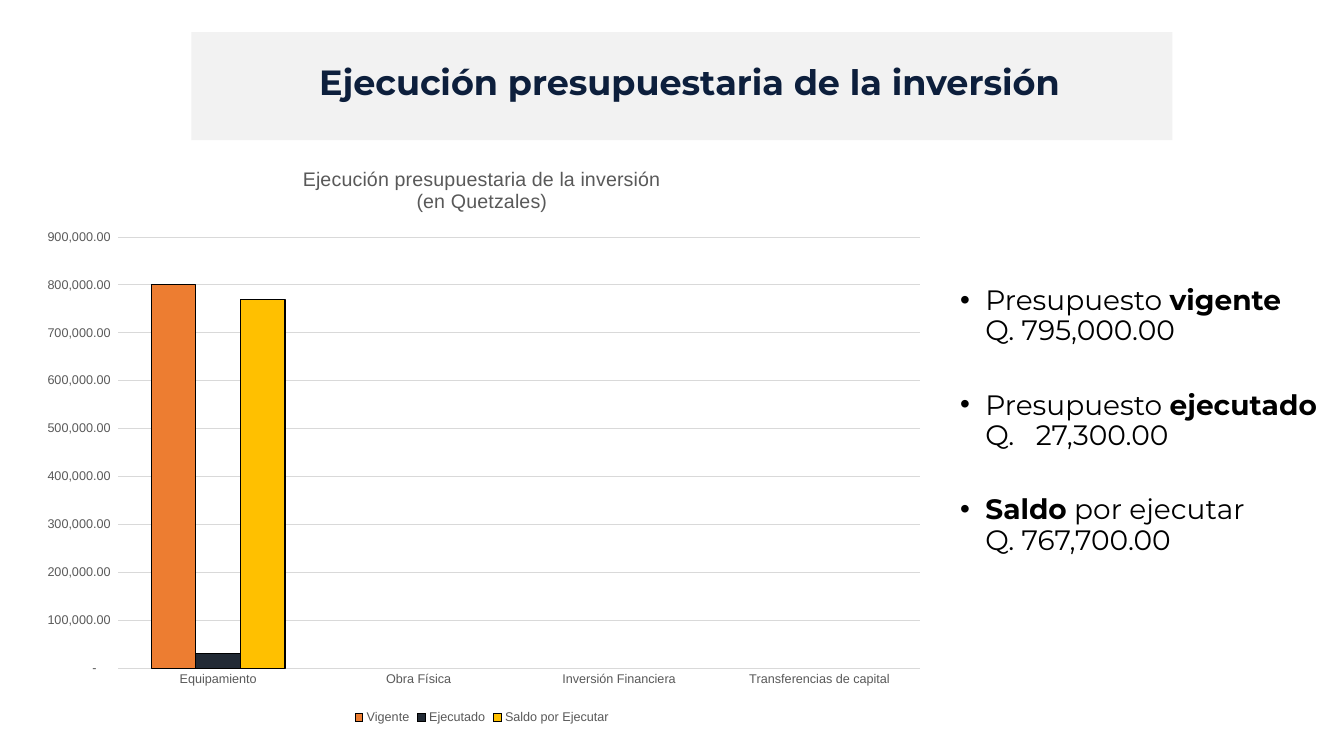
import pptx
import pptx.chart.data
import pptx.dml.color
import pptx.enum.chart
import pptx.enum.shapes
import pptx.enum.text
import pptx.oxml
import pptx.oxml.ns
import pptx.util
from dataclasses import dataclass

Pt = pptx.util.Pt


@dataclass(frozen=True)
class Theme:
    text_font: str = "Montserrat"
    chart_font: str = "Arial"
    band: str = "F2F2F2"
    title: str = "0D1F3C"
    body: str = "000000"
    muted: str = "595959"
    grid: str = "D9D9D9"
    outline: str = "000000"
    title_size: float = 25
    body_size: float = 20
    chart_title_size: float = 14
    label_size: float = 9


THEME = Theme()

CATEGORIES = ["Equipamiento", "Obra Física", "Inversión Financiera",
              "Transferencias de capital"]
SERIES = [("Vigente", 800000, "ED7D31"),
          ("Ejecutado", 30000, "222A35"),
          ("Saldo por Ejecutar", 770000, "FFC000")]
# Each bullet is a list of (text, bold) runs
BULLETS = [
    [("Presupuesto ", False), ("vigente", True), ("\vQ. 795,000.00", False)],
    [("Presupuesto ", False), ("ejecutado", True), ("\vQ.\t27,300.00", False)],
    [("Saldo", True), (" por ejecutar\vQ. 767,700.00", False)],
]


def rgb(value):
    return pptx.dml.color.RGBColor.from_string(value)


def set_font(font, name, size, color, bold=False):
    font.name, font.size, font.bold = name, Pt(size), bold
    font.color.rgb = rgb(color)


def place(sp, left, top, width, height):
    sp.left, sp.top, sp.width, sp.height = map(Pt, (left, top, width, height))


def add_xml(parent, xml):
    el = pptx.oxml.parse_xml(xml)
    parent.append(el)
    return el


def add_band(s, left, top, width, height):
    sp = s.shapes.add_shape(pptx.enum.shapes.MSO_SHAPE.RECTANGLE,
                            *map(Pt, (left, top, width, height)))
    sp.shadow.inherit = False
    sp.fill.solid()
    sp.fill.fore_color.rgb = rgb(THEME.band)
    sp.line.fill.background()
    s.shapes._spTree.insert(2, sp._element)  # behind the title


def set_title(s, text):
    sp = s.shapes.title
    place(sp, 145.5, 26.7, 694, 67.5)
    tf = sp.text_frame
    tf.auto_size = pptx.enum.text.MSO_AUTO_SIZE.NONE
    tf.vertical_anchor = pptx.enum.text.MSO_ANCHOR.MIDDLE
    tf.text = text
    p = tf.paragraphs[0]
    p.alignment = pptx.enum.text.PP_ALIGN.CENTER
    p.line_spacing = 0.9
    set_font(p.runs[0].font, THEME.text_font, THEME.title_size, THEME.title, True)


def format_bullet(p, indent, tab):
    pPr = p._p.get_or_add_pPr()
    pPr.set("marL", str(Pt(indent)))
    pPr.set("indent", str(-Pt(indent)))
    ns = pptx.oxml.ns.nsdecls("a")
    add_xml(pPr, f'<a:buFont {ns} typeface="Arial"/>')
    add_xml(pPr, f'<a:buChar {ns} char="•"/>')
    add_xml(pPr, f'<a:tabLst {ns}><a:tab pos="{Pt(tab)}" algn="l"/></a:tabLst>')


def set_bullets(s, bullets):
    sp = s.placeholders[1]
    place(sp, 678.7, 200.7, 278, 210)
    tf = sp.text_frame
    tf.auto_size = pptx.enum.text.MSO_AUTO_SIZE.NONE
    for i, runs in enumerate(bullets):
        p = tf.add_paragraph() if i else tf.paragraphs[0]
        p.line_spacing = 0.9
        p.space_before = Pt(31.7 if i else 0)
        format_bullet(p, 18, 54)
        for text, bold in runs:
            for j, part in enumerate(text.split("\v")):
                if j:
                    p.add_line_break()
                if part:
                    r = p.add_run()
                    r.text = part
                    set_font(r.font, THEME.text_font, THEME.body_size, THEME.body, bold)


def set_chart_title(chart, lines):
    tf = chart.chart_title.text_frame
    tf.text = "\n".join(lines)
    for p in tf.paragraphs:
        set_font(p.runs[0].font, THEME.chart_font, THEME.chart_title_size, THEME.muted)
    chart.chart_title.include_in_layout = False


def set_axis(axis):
    axis.major_tick_mark = axis.minor_tick_mark = pptx.enum.chart.XL_TICK_MARK.NONE
    axis.format.line.fill.background()
    set_font(axis.tick_labels.font, THEME.chart_font, THEME.label_size, THEME.muted)


def set_plot_area(chart, x, y, w, h):
    area = chart._chartSpace.chart.plotArea
    for old in area.findall(pptx.oxml.ns.qn("c:layout")):
        area.remove(old)
    sizes = "".join(f'<c:{k} val="{v}"/>' for k, v in zip("xywh", (x, y, w, h)))
    area.insert(0, pptx.oxml.parse_xml(
        f'<c:layout {pptx.oxml.ns.nsdecls("c")}><c:manualLayout>'
        '<c:layoutTarget val="inner"/><c:xMode val="edge"/><c:yMode val="edge"/>'
        f'{sizes}</c:manualLayout></c:layout>'))


def add_budget_chart(s, left, top, width, height):
    data = pptx.chart.data.CategoryChartData()
    data.categories = CATEGORIES
    for name, value, _ in SERIES:
        data.add_series(name, [value] + [None] * (len(CATEGORIES) - 1))
    chart = s.shapes.add_chart(pptx.enum.chart.XL_CHART_TYPE.COLUMN_CLUSTERED,
                               *map(Pt, (left, top, width, height)), data).chart
    set_font(chart.font, THEME.chart_font, THEME.label_size, THEME.muted)
    set_chart_title(chart, ["Ejecución presupuestaria de la inversión",
                            "(en Quetzales)"])
    set_plot_area(chart, 0.101, 0.155, 0.879, 0.741)

    # Axes
    set_axis(chart.category_axis)
    axis = chart.value_axis
    set_axis(axis)
    axis.minimum_scale, axis.maximum_scale, axis.major_unit = 0, 900000, 100000
    axis.tick_labels.number_format = '#,##0.00_-;-#,##0.00_-;"-"??_-'
    axis.tick_labels.number_format_is_linked = False
    axis.major_gridlines.format.line.color.rgb = rgb(THEME.grid)
    axis.major_gridlines.format.line.width = Pt(0.75)

    # Columns
    plot = chart.plots[0]
    plot.gap_width, plot.overlap, plot.vary_by_categories = 150, 0, False
    for series, (_, _, color) in zip(plot.series, SERIES):
        series.format.fill.solid()
        series.format.fill.fore_color.rgb = rgb(color)
        series.format.line.color.rgb = rgb(THEME.outline)
        series.format.line.width = Pt(0.75)

    # Legend
    chart.has_legend = True
    chart.legend.position = pptx.enum.chart.XL_LEGEND_POSITION.BOTTOM
    chart.legend.include_in_layout = False
    set_font(chart.legend.font, THEME.chart_font, THEME.label_size, THEME.muted)


def main():
    prs = pptx.Presentation()
    prs.slide_width, prs.slide_height = Pt(960), Pt(540)
    s = prs.slides.add_slide(prs.slide_layouts[1])
    add_band(s, 136.8, 23, 700.6, 77.2)
    set_title(s, "Ejecución presupuestaria de la inversión")
    set_bullets(s, BULLETS)
    add_budget_chart(s, 18.5, 105, 651.5, 415.5)
    prs.save("out.pptx")


if __name__ == "__main__":
    main()
